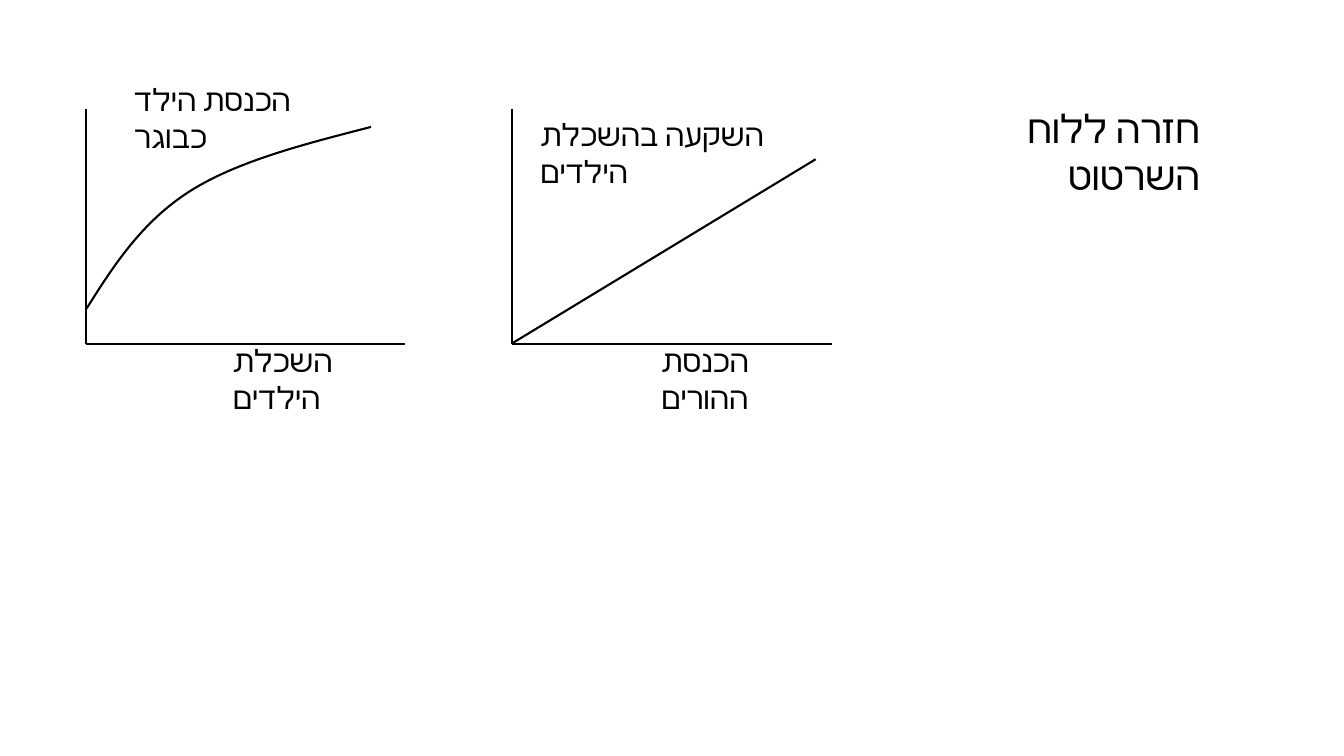
from pptx import Presentation
from pptx.dml.color import RGBColor
from pptx.enum.shapes import MSO_CONNECTOR as Conn
from pptx.enum.text import MSO_ANCHOR as Anchor, MSO_AUTO_SIZE as Auto, PP_ALIGN as Align
from pptx.oxml import parse_xml
from pptx.oxml.ns import nsdecls, qn
from pptx.util import Inches, Pt

BLACK = RGBColor(0, 0, 0)
FACE = "Calibri"
LABEL = dict(margin_left=0, margin_right=0, margin_top=0, margin_bottom=0,
             word_wrap=True, auto_size=Auto.SHAPE_TO_FIT_TEXT)
TITLE = dict(word_wrap=True, vertical_anchor=Anchor.TOP,
             auto_size=Auto.SHAPE_TO_FIT_TEXT)
GRAPHS = [
    dict(box=(5.08, 1.08, 3.17, 2.33),
         curve=[(0.01, 2.32), (3.01, 0.5)],
         labels=[("הכנסת ההורים", 1.48, 2.31, 1.76),
                 ("השקעה בהשכלת הילדים", 0.28, 0.07, 2.96)]),
    dict(box=(0.85, 1.08, 3.17, 2.33),
         curve=[(0.01, 1.98), (0.28, 1.55), (0.56, 1.12), (1.03, 0.82),
                (1.5, 0.52), (2.17, 0.35), (2.83, 0.18)],
         labels=[("השכלת הילדים", 1.46, 2.31, 1.79),
                 ("הכנסת הילד כבוגר", 0.48, -0.28, 2.21)]),
]


def apply(item, form):
    """Set every attribute in the dict of format values."""
    for name, value in form.items():
        setattr(item, name, value)


def write(shape, text, size, form):
    """Fill a shape with one formatted paragraph and return it."""
    frame = shape.text_frame
    apply(frame, form)
    para = frame.paragraphs[0]
    run = para.add_run()
    run.text = text
    apply(run.font, dict(name=FACE, size=Pt(size), bold=False))
    run.font.color.rgb = BLACK
    run.font._element.append(parse_xml(f'<a:cs {nsdecls("a")} typeface="{FACE}"/>'))
    return para


def ink(shape, width):
    """Give a line its colour and width, without shadow."""
    shape.line.color.rgb = BLACK
    shape.line.width = Pt(width)
    shape._element.spPr.append(parse_xml(f'<a:effectLst {nsdecls("a")}/>'))


def line(slide, start, end, width):
    """Draw a straight line between two points in inches."""
    ends = [Inches(n) for n in (*start, *end)]
    ink(slide.shapes.add_connector(Conn.STRAIGHT, *ends), width)


def bend(slide, dots, width):
    """Draw a smooth curve through Bezier points in inches."""
    spots = [(Inches(x), Inches(y)) for x, y in dots]
    maker = slide.shapes.build_freeform(*spots[0])
    maker.add_line_segments(spots[1:], close=False)
    shape = maker.convert_to_shape()
    shape.fill.background()
    ink(shape, width)
    steps = shape._element.xpath(".//a:lnTo")
    for first, *rest in zip(*[iter(steps)] * 3):
        first.tag = qn("a:cubicBezTo")
        for step in rest:
            first.append(step[0])
            step.getparent().remove(step)


def graph(slide, box, curve, labels):
    """Draw axes, curve and labels relative to the plot box."""
    left, top, wide, high = box
    base = top + high
    line(slide, (left, top), (left, base), 1.25)
    line(slide, (left, base), (left + wide, base), 1.25)
    dots = [(left + x, top + y) for x, y in curve]
    if len(dots) == 2:
        line(slide, *dots, 1.5)
    else:
        bend(slide, dots, 1.5)
    for text, x, y, width in labels:
        area = [Inches(n) for n in (left + x, top + y, width, 0.37)]
        para = write(slide.shapes.add_textbox(*area), text, 22, LABEL)
        para.alignment = Align.LEFT


def title(slide, text, box):
    """Place the right-to-left title in its box."""
    shape = slide.shapes.title
    sides = ("left", "top", "width", "height")
    apply(shape, dict(zip(sides, map(Inches, box))))
    para = write(shape, text, 28, TITLE)
    para.alignment = Align.RIGHT
    para._p.get_or_add_pPr().set("rtl", "1")


def main():
    """Build the slide and save it."""
    deck = Presentation()
    apply(deck, dict(slide_width=Inches(13.33), slide_height=Inches(7.5)))
    slide = deck.slides.add_slide(deck.slide_layouts[5])
    title(slide, "חזרה ללוח השרטוט", (9.91, 0.98, 2.09, 1.51))
    for plot in GRAPHS:
        graph(slide, **plot)
    deck.save("out.pptx")


if __name__ == "__main__":
    main()
